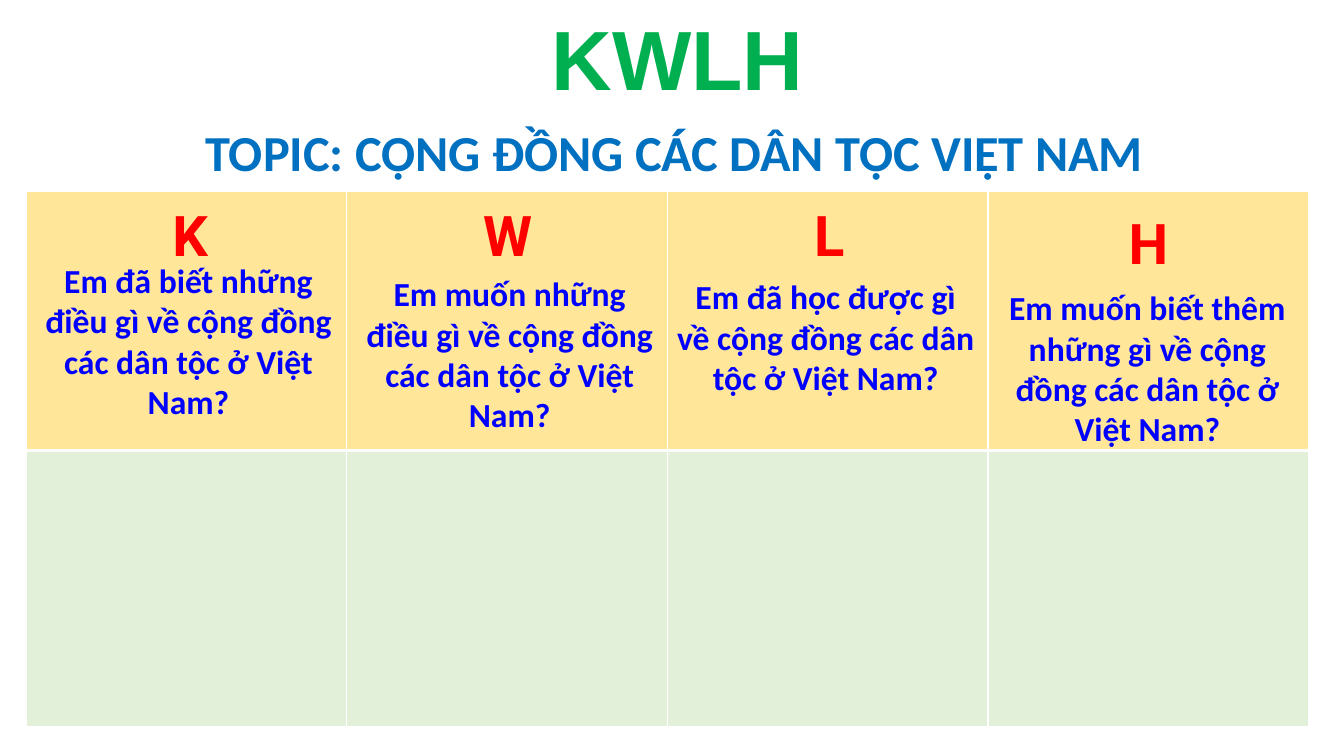
from lxml.etree import SubElement
from pptx import Presentation
from pptx.dml.color import RGBColor
from pptx.enum.text import MSO_AUTO_SIZE as AutoSize, PP_ALIGN as Align
from pptx.oxml.ns import qn
from pptx.util import Pt

PX = 9144
GREEN = RGBColor(0x00, 0xB0, 0x50)
BLUE = RGBColor(0x00, 0x70, 0xC0)
RED = RGBColor(0xFF, 0x00, 0x00)
INDIGO = RGBColor(0x00, 0x00, 0xFF)
CREAM = RGBColor(0xFF, 0xE6, 0x99)
MINT = RGBColor(0xE2, 0xF0, 0xD9)
WHITE = RGBColor(0xFF, 0xFF, 0xFF)

COLUMNS = [
    ("K", (3, 4, 319, 77), "Em đã biết những điều gì về cộng đồng các dân tộc ở Việt Nam?",
     (3, 63, 316, 172)),
    ("W", (3, 4, 313, 77), "Em muốn những điều gì về cộng đồng các dân tộc ở Việt Nam?",
     (2, 76, 319, 172)),
    ("L", (2, 4, 317, 77), "Em đã học được gì về cộng đồng các dân tộc ở Việt Nam?",
     (-1, 79, 316, 131)),
    ("H", (4, 12, 310, 77), "Em muốn biết thêm những gì về cộng đồng các dân tộc ở Việt Nam?",
     (3, 90, 310, 172)),
]


def px(*lengths):
    """Turn px lengths into EMU."""
    return [length * PX for length in lengths]


def add_text(s, text, box, size, color, font="Calibri", align=Align.CENTER):
    """Add a bold one-paragraph text box."""
    tf = s.shapes.add_textbox(*px(*box)).text_frame
    tf.word_wrap = True
    tf.auto_size = AutoSize.SHAPE_TO_FIT_TEXT
    p = tf.paragraphs[0]
    p.alignment = align
    r = p.add_run()
    r.text = text
    r.font.name, r.font.size, r.font.bold = font, Pt(size), True
    r.font.color.rgb = color


def style_cell(cell, fill, bottom=1, top=1):
    """Give a cell its white borders and its fill."""
    tc_pr = cell._tc.get_or_add_tcPr()
    for side, width in (("L", 1), ("R", 1), ("T", top), ("B", bottom)):
        ln = SubElement(tc_pr, qn(f"a:ln{side}"), w=str(Pt(width)))
        solid = SubElement(ln, qn("a:solidFill"))
        SubElement(solid, qn("a:srgbClr"), val=str(WHITE))
    cell.fill.solid()
    cell.fill.fore_color.rgb = fill


def add_heading(s, left, top, width):
    """Place the title and the topic line below it."""
    add_text(s, "KWLH", (left + 477, top, 278, 111), 60, GREEN, "Arial", Align.LEFT)
    add_text(s, "TOPIC: CỘNG ĐỒNG CÁC DÂN TỘC VIỆT NAM",
             (left, top + 113, width, 71), 36, BLUE)


def add_chart_grid(s, left, top, width, row_heights):
    """Place the KWLH table with a letter and a question over each column."""
    col_width = width // len(COLUMNS)
    frame = s.shapes.add_table(len(row_heights), len(COLUMNS),
                               *px(left, top, width, sum(row_heights)))
    table = frame.table
    for row, height in zip(table.rows, row_heights):
        row.height = height * PX
    for i, (letter, letter_box, question, question_box) in enumerate(COLUMNS):
        table.columns[i].width = col_width * PX
        style_cell(table.cell(0, i), CREAM, bottom=3)
        style_cell(table.cell(1, i), MINT, top=3)
        x = left + i * col_width
        for text, (dx, dy, w, h), size, color, font in (
                (letter, letter_box, 40, RED, "Roboto"),
                (question, question_box, 24, INDIGO, "Calibri")):
            add_text(s, text, (x + dx, top + dy, w, h), size, color, font)


def main():
    """Build the slide and save it."""
    prs = Presentation()
    prs.slide_width, prs.slide_height = px(1333, 750)
    s = prs.slides.add_slide(prs.slide_layouts[6])
    add_chart_grid(s, 26, 190, 1272, (257, 274))
    add_heading(s, 60, 2, 1218)
    prs.save("out.pptx")


if __name__ == "__main__":
    main()
